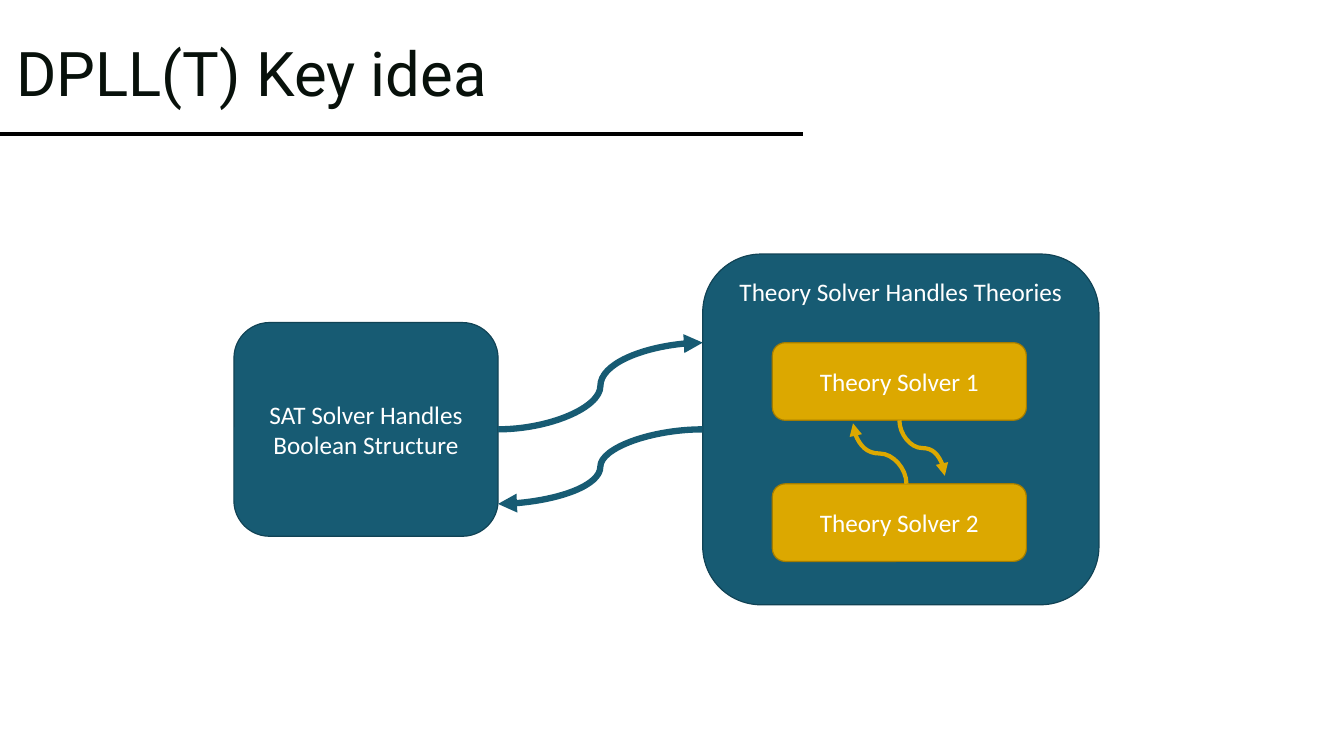
from lxml import etree
from pptx import Presentation
from pptx import util as u
from pptx.dml.color import RGBColor
from pptx.enum import shapes, text
from pptx.oxml.ns import qn

TEAL, TEAL_EDGE = "175B73", "114355"
GOLD, GOLD_EDGE = "DCA800", "A37C00"


def rgb(value):
    """Turn a hex string into a colour."""
    return RGBColor.from_string(value)


def add_run(p, words, font, size, color):
    """Append one formatted run to a paragraph."""
    r = p.add_run()
    r.text = words
    r.font.name = font
    r.font.size = u.Pt(size)
    r.font.color.rgb = rgb(color)


def add_line(slide, kind, begin, end, color, width):
    """Draw a shadowless connector between two points in inches."""
    points = [u.Inches(v) for v in (*begin, *end)]
    c = slide.shapes.add_connector(kind, *points)
    c.line.color.rgb = rgb(color)
    c.line.width = u.Pt(width)
    etree.SubElement(c._element.spPr, qn("a:effectLst"))
    return c


def add_arrow(slide, begin, end, color, width, vertical=False):
    """Draw a curved arrow that leaves sideways, or up and down if vertical."""
    if vertical:
        (x1, y1), (x2, y2) = begin, end
        mx, my = (x1 + x2) / 2, (y1 + y2) / 2
        hx, hy = (y1 - y2) / 2, (x2 - x1) / 2
        begin, end = (mx - hx, my - hy), (mx + hx, my + hy)
    c = add_line(slide, shapes.MSO_CONNECTOR.CURVE, begin, end, color, width)
    if vertical:
        c._element.spPr.find(qn("a:xfrm")).set("rot", str(270 * 60000))
    etree.SubElement(c.line._get_or_add_ln(), qn("a:tailEnd"), type="triangle")


def add_box(slide, box, words, fill, edge, anchor=text.MSO_ANCHOR.MIDDLE):
    """Draw a labelled rounded box."""
    sp = slide.shapes.add_shape(shapes.MSO_SHAPE.ROUNDED_RECTANGLE,
                                *[u.Inches(v) for v in box])
    sp.shadow.inherit = False
    sp.fill.solid()
    sp.fill.fore_color.rgb = rgb(fill)
    sp.line.color.rgb = rgb(edge)
    sp.line.width = u.Pt(0.85)
    tf = sp.text_frame
    tf.word_wrap = True
    tf.vertical_anchor = anchor
    p = tf.paragraphs[0]
    p.alignment = text.PP_ALIGN.CENTER
    add_run(p, words, "Calibri", 18, "FFFFFF")


def add_heading(slide, box, words):
    """Place the title and the rule beneath it."""
    add_line(slide, shapes.MSO_CONNECTOR.STRAIGHT, (0, 1.33), (7.96, 1.33),
             "000000", 2.25)
    sp = slide.shapes.title
    sp.left, sp.top, sp.width, sp.height = [u.Inches(v) for v in box]
    tf = sp.text_frame
    tf.auto_size = text.MSO_AUTO_SIZE.NONE
    tf.word_wrap = True
    tf.vertical_anchor = text.MSO_ANCHOR.MIDDLE
    p = tf.paragraphs[0]
    p.alignment = text.PP_ALIGN.LEFT
    p.line_spacing = 0.9
    add_run(p, words, "Roboto", 44, "08110B")


def add_theory_solver(slide, box):
    """Draw the theory panel with its two solvers and their exchange."""
    x, y, w, h = box
    add_box(slide, box, "Theory Solver Handles Theories", TEAL, TEAL_EDGE,
            text.MSO_ANCHOR.TOP)
    solver_w, solver_h, pitch = 2.52, 0.77, 1.4
    left, top = x + 0.69, y + 0.88
    for i in range(2):
        add_box(slide, (left, top + i * pitch, solver_w, solver_h),
                f"Theory Solver {i + 1}", GOLD, GOLD_EDGE)
    middle, upper, lower = left + solver_w / 2, top + solver_h, top + pitch
    add_arrow(slide, (middle, upper), (middle + 0.45, lower - 0.08),
              GOLD, 3, vertical=True)
    add_arrow(slide, (middle + 0.07, lower), (middle - 0.46, upper + 0.03),
              GOLD, 3, vertical=True)


def add_solver_loop(slide, sat, theory):
    """Draw both solvers and the arrows between them."""
    add_box(slide, sat, "SAT Solver Handles Boolean Structure",
            TEAL, TEAL_EDGE)
    add_theory_solver(slide, theory)
    left, right = sat[0] + sat[2], theory[0]
    middle = sat[1] + sat[3] / 2
    add_arrow(slide, (left, middle), (right, middle - 0.86), TEAL, 4.5)
    add_arrow(slide, (right, middle), (left, middle + 0.74), TEAL, 4.5)


def main():
    """Build and save the slide."""
    prs = Presentation()
    prs.slide_width, prs.slide_height = u.Inches(13.33), u.Inches(7.5)
    slide = prs.slides.add_slide(prs.slide_layouts[5])
    add_heading(slide, (0.06, 0.03, 7.51, 1.45), "DPLL(T) Key idea")
    add_solver_loop(slide, (2.32, 3.2, 2.62, 2.12), (6.97, 2.52, 3.93, 3.48))
    prs.save("out.pptx")


if __name__ == "__main__":
    main()
